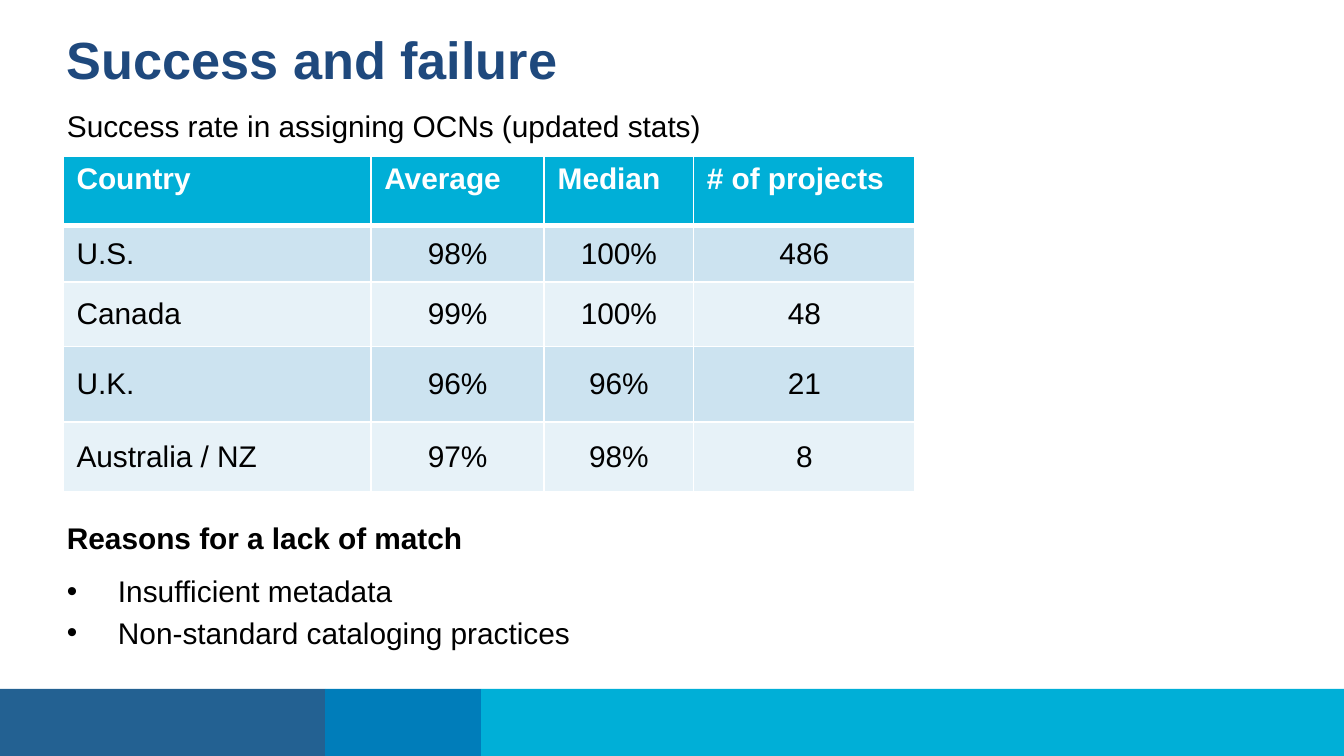
from dataclasses import dataclass
from itertools import accumulate

from lxml.etree import SubElement
from pptx import Presentation
from pptx.dml.color import RGBColor as RGB
from pptx.enum.shapes import MSO_SHAPE as Shape
from pptx.enum.text import MSO_ANCHOR as Anchor, PP_ALIGN as Align
from pptx.oxml import parse_xml
from pptx.oxml.ns import nsdecls, qn
from pptx.util import Inches, Pt


@dataclass(frozen=True)
class Theme:
    font: str = "Arial"
    title_size: int = 28
    body_size: int = 16
    title: str = "1F497D"
    text: str = "000000"
    white: str = "FFFFFF"
    header: str = "00AFD7"
    bands: tuple = ("CCE3F0", "E7F2F8")
    footer: tuple = ("236192", "007DBA", "00AFD7")


THEME = Theme()
COLUMNS = 100  # grid of square units, ten to the inch
ROWS = COLUMNS * 9 / 16
LEFT, TEXT_WIDTH = 4, 88.7
FOOTER_HEIGHT = 5
FOOTER_WIDTHS = (24.2, 11.6, 64.2)
TABLE_TOP, TABLE_LEFT = 11.6, 4.7
TABLE_COLUMNS = (22.9, 12.9, 11.1, 16.5)
TABLE_ROWS = (5.2, 4.2, 4.8, 5.6, 5.2)
STATS = (
    ("Country", "Average", "Median", "# of projects"),
    ("U.S.", "98%", "100%", "486"),
    ("Canada", "99%", "100%", "48"),
    ("U.K.", "96%", "96%", "21"),
    ("Australia / NZ", "97%", "98%", "8"),
)
REASONS = ("Insufficient metadata", "Non-standard cataloging practices")


def grid(units):
    return Inches(units / 10)


def add_run(p, text, size=THEME.body_size, color=THEME.text, bold=False):
    r = p.add_run()
    r.text = text
    r.font.name, r.font.size, r.font.bold = THEME.font, Pt(size), bold
    r.font.color.rgb = RGB.from_string(color)


def add_text_frame(s, top, height):
    sp = s.shapes.add_textbox(grid(LEFT), grid(top), grid(TEXT_WIDTH), grid(height))
    tf = sp.text_frame
    tf.word_wrap = True
    return tf


def add_bullet(tf, text):
    p = tf.add_paragraph()
    pPr = p._p.get_or_add_pPr()
    pPr.set("marL", str(Inches(0.38)))
    pPr.set("indent", str(-Inches(0.38)))
    SubElement(pPr, qn("a:buFont"), typeface=THEME.font)
    SubElement(pPr, qn("a:buChar"), char="•")
    p.space_before = Pt(3.2)
    add_run(p, text)


def add_footer(s):
    starts = accumulate(FOOTER_WIDTHS, initial=0)
    for left, width, color in zip(starts, FOOTER_WIDTHS, THEME.footer):
        sp = s.shapes.add_shape(Shape.RECTANGLE, grid(left), grid(ROWS - FOOTER_HEIGHT),
                                grid(width), grid(FOOTER_HEIGHT))
        sp.shadow.inherit = False
        sp.fill.solid()
        sp.fill.fore_color.rgb = RGB.from_string(color)
        sp.line.fill.background()


def set_borders(cell, **widths):
    """Draw white borders; widths are points keyed by side: L, R, T, B."""
    tcPr = cell._tc.get_or_add_tcPr()
    for i, (side, width) in enumerate(widths.items()):
        tcPr.insert(i, parse_xml(
            f'<a:ln{side} {nsdecls("a")} w="{Pt(width)}"><a:solidFill>'
            f'<a:srgbClr val="{THEME.white}"/></a:solidFill></a:ln{side}>'))


def fill_cell(cell, text, row, col):
    header = row == 0
    cell.fill.solid()
    fill = THEME.header if header else THEME.bands[(row - 1) % 2]
    cell.fill.fore_color.rgb = RGB.from_string(fill)
    set_borders(cell, L=1, R=1, T=3 if row == 1 else 1, B=3 if header else 1)
    cell.vertical_anchor = Anchor.TOP if header else Anchor.MIDDLE
    p = cell.text_frame.paragraphs[0]
    p.alignment = Align.LEFT if header or col == 0 else Align.CENTER
    add_run(p, text, color=THEME.white if header else THEME.text, bold=header)


def add_stats_table(s):
    table = s.shapes.add_table(
        len(TABLE_ROWS), len(TABLE_COLUMNS), grid(TABLE_LEFT), grid(TABLE_TOP),
        grid(sum(TABLE_COLUMNS)), grid(sum(TABLE_ROWS))).table
    for column, width in zip(table.columns, TABLE_COLUMNS):
        column.width = grid(width)
    for row, height in zip(table.rows, TABLE_ROWS):
        row.height = grid(height)
    for i, values in enumerate(STATS):
        for j, text in enumerate(values):
            fill_cell(table.cell(i, j), text, i, j)


def add_reasons(s):
    tf = add_text_frame(s, 38.2, 12)
    p = tf.paragraphs[0]
    p.space_after = Pt(6)
    add_run(p, "Reasons for a lack of match", bold=True)
    for reason in REASONS:
        add_bullet(tf, reason)


def main():
    prs = Presentation()
    prs.slide_width, prs.slide_height = grid(COLUMNS), grid(ROWS)
    s = prs.slides.add_slide(prs.slide_layouts[6])
    add_footer(s)
    title = add_text_frame(s, 1.5, 5.5)
    add_run(title.paragraphs[0], "Success and failure",
            THEME.title_size, THEME.title, bold=True)
    subtitle = add_text_frame(s, 7.5, 3.6)
    add_run(subtitle.paragraphs[0], "Success rate in assigning OCNs (updated stats)")
    add_stats_table(s)
    add_reasons(s)
    prs.save("out.pptx")


if __name__ == "__main__":
    main()
